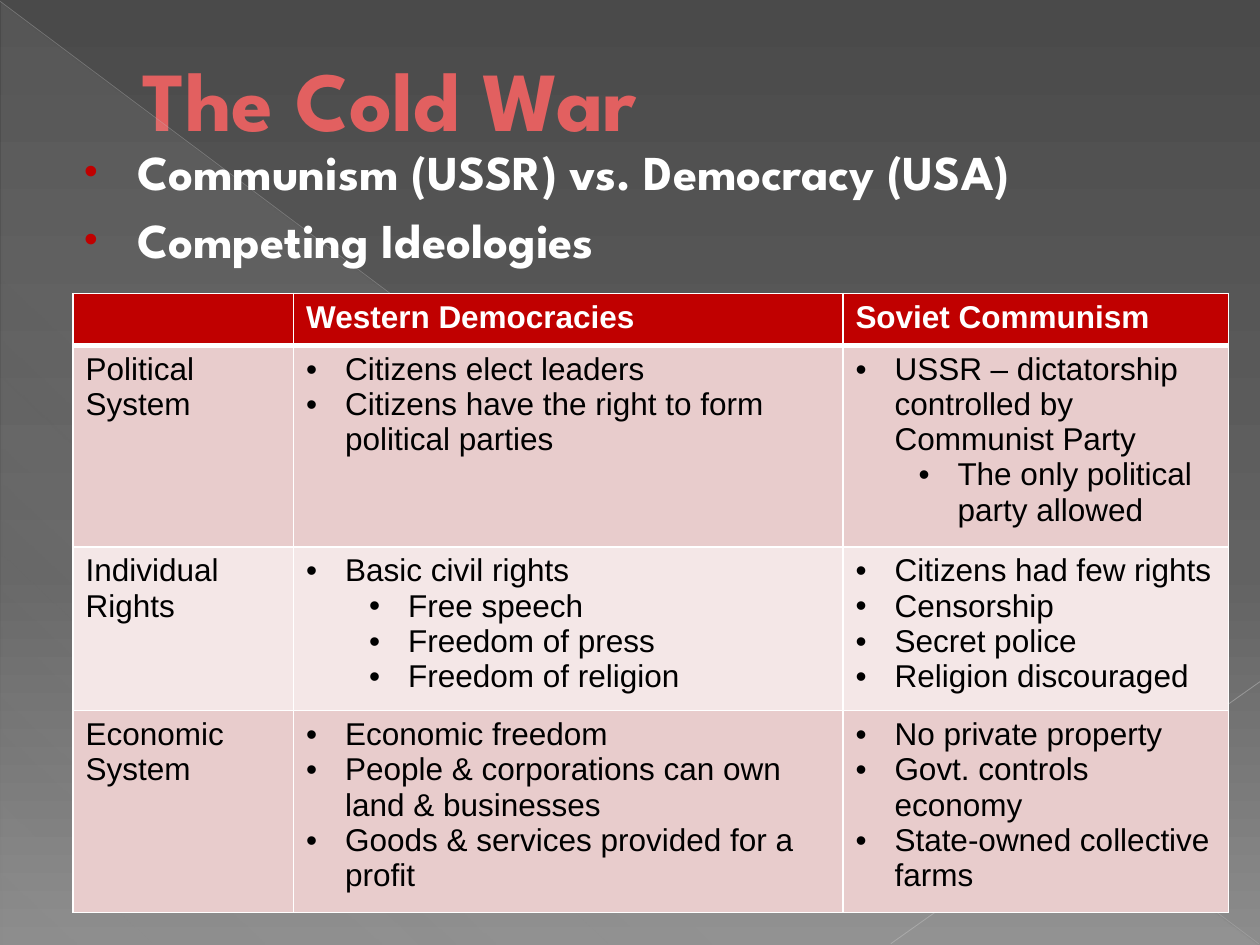
from dataclasses import dataclass
from typing import NamedTuple

from lxml.etree import SubElement
from pptx import Presentation
from pptx.dml.color import RGBColor
from pptx.enum.shapes import MSO_CONNECTOR as Connector, MSO_SHAPE as Preset
from pptx.enum.text import MSO_ANCHOR as Anchor, MSO_AUTO_SIZE as AutoSize, PP_ALIGN as Align
from pptx.oxml.ns import qn
from pptx.util import Inches, Pt


@dataclass(frozen=True)
class Theme:
    display: str = "League Spartan"
    plain: str = "Arial"
    title: str = "E26060"
    title_edge: str = "850000"
    accent: str = "C00000"
    light: str = "FFFFFF"
    dark: str = "000000"
    bands: tuple = ("E8CCCC", "F4E7E7")
    glow: str = "D2D2D2"
    title_size: float = 48
    body_size: float = 27.8
    table_size: float = 18


class Stop(NamedTuple):
    position: int
    color: str
    alpha: int = 100


class Ray(NamedTuple):
    start: tuple
    end: tuple
    color: str
    width: float
    alpha: int


class Item(NamedTuple):
    text: str
    level: int = 0


class Topic(NamedTuple):
    name: str
    western: list
    soviet: list


THEME = Theme()
BACKDROP = [Stop(0, "4A4A4A"), Stop(60, "626262"), Stop(100, "8C8C8C")]
SHEEN = [Stop(0, THEME.glow, 10), Stop(70, THEME.glow, 8), Stop(100, THEME.glow, 1)]
RAYS = [
    Ray((0, 0.01), (9.99, 7.49), "BFBFBF", 0.39, 35),
    Ray((10, 5.41), (7.07, 7.49), "C6C6C6", 0.47, 45),
]
POINTS = ["Communism (USSR) vs. Democracy (USA)", "Competing Ideologies"]
HEADINGS = ["", "Western Democracies", "Soviet Communism"]
TOPICS = [
    Topic("Political System",
          [Item("Citizens elect leaders"),
           Item("Citizens have the right to form political parties")],
          [Item("USSR – dictatorship controlled by Communist Party"),
           Item("The only political party allowed", 1)]),
    Topic("Individual Rights",
          [Item("Basic civil rights"), Item("Free speech", 1),
           Item("Freedom of press", 1), Item("Freedom of religion", 1)],
          [Item("Citizens had few rights"), Item("Censorship"),
           Item("Secret police"), Item("Religion discouraged")]),
    Topic("Economic System",
          [Item("Economic freedom"),
           Item("People & corporations can own land & businesses"),
           Item("Goods & services provided for a profit")],
          [Item("No private property"), Item("Govt. controls economy"),
           Item("State-owned collective farms")]),
]
COLUMN_WIDTHS = [1.75, 4.36, 3.06]
ROW_HEIGHTS = [0.41, 1.5, 1.22, 1.5]


def add_color(parent, color: str, alpha: int = 100) -> None:
    node = SubElement(parent, qn("a:srgbClr"), val=color)
    if alpha < 100:
        SubElement(node, qn("a:alpha"), val=str(alpha * 1000))


def set_gradient(fill, holder, stops: list, angle: int) -> None:
    fill.gradient()
    gradient = holder.find(qn("a:gradFill"))
    for child in list(gradient):
        gradient.remove(child)
    stop_list = SubElement(gradient, qn("a:gsLst"))
    for stop in stops:
        node = SubElement(stop_list, qn("a:gs"), pos=str(stop.position * 1000))
        add_color(node, stop.color, stop.alpha)
    SubElement(gradient, qn("a:lin"), ang=str(angle * 60000), scaled="0")


def add_line(parent, tag: str, color: str, width: float):
    line = SubElement(parent, qn(tag), w=str(int(Pt(width))))
    add_color(SubElement(line, qn("a:solidFill")), color)
    return line


def add_span(para, text: str, color: str, **formats):
    span = para.add_run()
    span.text = text
    for name, value in formats.items():
        setattr(span.font, name, value)
    span.font.color.rgb = RGBColor.from_string(color)
    return span


def set_bullet(para, margin: float, hang: float, color: str = "", percent: int = 100) -> None:
    props = para._p.get_or_add_pPr()
    props.set("marL", str(int(Inches(margin))))
    props.set("indent", str(-int(Inches(hang))))
    if color:
        add_color(SubElement(props, qn("a:buClr")), color)
    SubElement(props, qn("a:buSzPct"), val=str(percent * 1000))
    SubElement(props, qn("a:buFont"), typeface=THEME.plain)
    SubElement(props, qn("a:buChar"), char="•")


def next_para(frame, index: int):
    return frame.add_paragraph() if index else frame.paragraphs[0]


def draw_backdrop(page) -> None:
    fill = page.background.fill
    fill.solid()
    set_gradient(fill, page._element.find(".//" + qn("p:bgPr")), BACKDROP, 90)
    sheen = page.shapes.add_shape(
        Preset.RIGHT_TRIANGLE, Inches(0.01), Inches(0.02), Inches(9.98), Inches(7.48))
    sheen.shadow.inherit = False
    sheen.line.fill.background()
    set_gradient(sheen.fill, sheen._element.spPr, SHEEN, 133)
    for ray in RAYS:
        line = page.shapes.add_connector(
            Connector.STRAIGHT, *(Inches(value) for value in ray.start + ray.end))
        line.line.width = Pt(ray.width)
        line.line.color.rgb = RGBColor.from_string(ray.color)
        color = line._element.spPr.find(".//" + qn("a:srgbClr"))
        SubElement(color, qn("a:alpha"), val=str(ray.alpha * 1000))
        SubElement(line._element.spPr, qn("a:effectLst"))


def draw_title(page) -> None:
    title = page.shapes.title
    place = {"left": 0.5, "top": 0.3, "width": 9, "height": 0.95}
    for name, value in place.items():
        setattr(title, name, Inches(value))
    frame = title.text_frame
    frame.auto_size = AutoSize.NONE
    frame.vertical_anchor = Anchor.MIDDLE
    para = frame.paragraphs[0]
    para.alignment = Align.LEFT
    para._p.get_or_add_pPr().set("marL", str(int(Inches(0.53))))
    span = add_span(para, "The Cold War", THEME.title, name=THEME.display,
                    size=Pt(THEME.title_size), bold=True)
    props = span._r.get_or_add_rPr()
    props.insert(0, add_line(props, "a:ln", THEME.title_edge, 0.5))


def draw_points(page) -> None:
    box = page.shapes.add_textbox(Inches(0.5), Inches(1.08), Inches(9), Inches(1.33))
    frame = box.text_frame
    frame.word_wrap = True
    for index, text in enumerate(POINTS):
        para = next_para(frame, index)
        set_bullet(para, 0.49, 0.42, THEME.accent, 80)
        if index:
            para.space_before = Pt(THEME.body_size * 0.2)
        add_span(para, text, THEME.light, name=THEME.display,
                 size=Pt(THEME.body_size), bold=True)


def fill_cell(cell, items: list, fill: str, color: str, bold: bool,
              bulleted: bool, top: float, bottom: float) -> None:
    props = cell._tc.get_or_add_tcPr()
    for tag, width in {"a:lnL": 1, "a:lnR": 1, "a:lnT": top, "a:lnB": bottom}.items():
        add_line(props, tag, THEME.light, width)
    cell.fill.solid()
    cell.fill.fore_color.rgb = RGBColor.from_string(fill)
    for index, item in enumerate(items):
        para = next_para(cell.text_frame, index)
        para.level = item.level
        if bulleted:
            set_bullet(para, 0.31 + 0.5 * item.level, 0.31)
        if item.text:
            add_span(para, item.text, color, name=THEME.plain,
                     size=Pt(THEME.table_size), bold=bold)


def draw_table(page) -> None:
    table = page.shapes.add_table(
        len(ROW_HEIGHTS), len(COLUMN_WIDTHS), Inches(0.58), Inches(2.33),
        Inches(sum(COLUMN_WIDTHS)), Inches(sum(ROW_HEIGHTS))).table
    for column, width in zip(table.columns, COLUMN_WIDTHS):
        column.width = Inches(width)
    for row, height in zip(table.rows, ROW_HEIGHTS):
        row.height = Inches(height)
    for column, heading in enumerate(HEADINGS):
        fill_cell(table.cell(0, column), [Item(heading)], THEME.accent,
                  THEME.light, True, False, 1, 3)
    for row, topic in enumerate(TOPICS, 1):
        for column, items in enumerate([[Item(topic.name)], topic.western, topic.soviet]):
            fill_cell(table.cell(row, column), items, THEME.bands[(row - 1) % 2],
                      THEME.dark, False, column > 0, 3 if row == 1 else 1, 1)


def main() -> None:
    deck = Presentation()
    deck.slide_width, deck.slide_height = Inches(10), Inches(7.5)
    page = deck.slides.add_slide(deck.slide_layouts[5])
    for draw in (draw_backdrop, draw_title, draw_points, draw_table):
        draw(page)
    deck.save("out.pptx")


if __name__ == "__main__":
    main()
